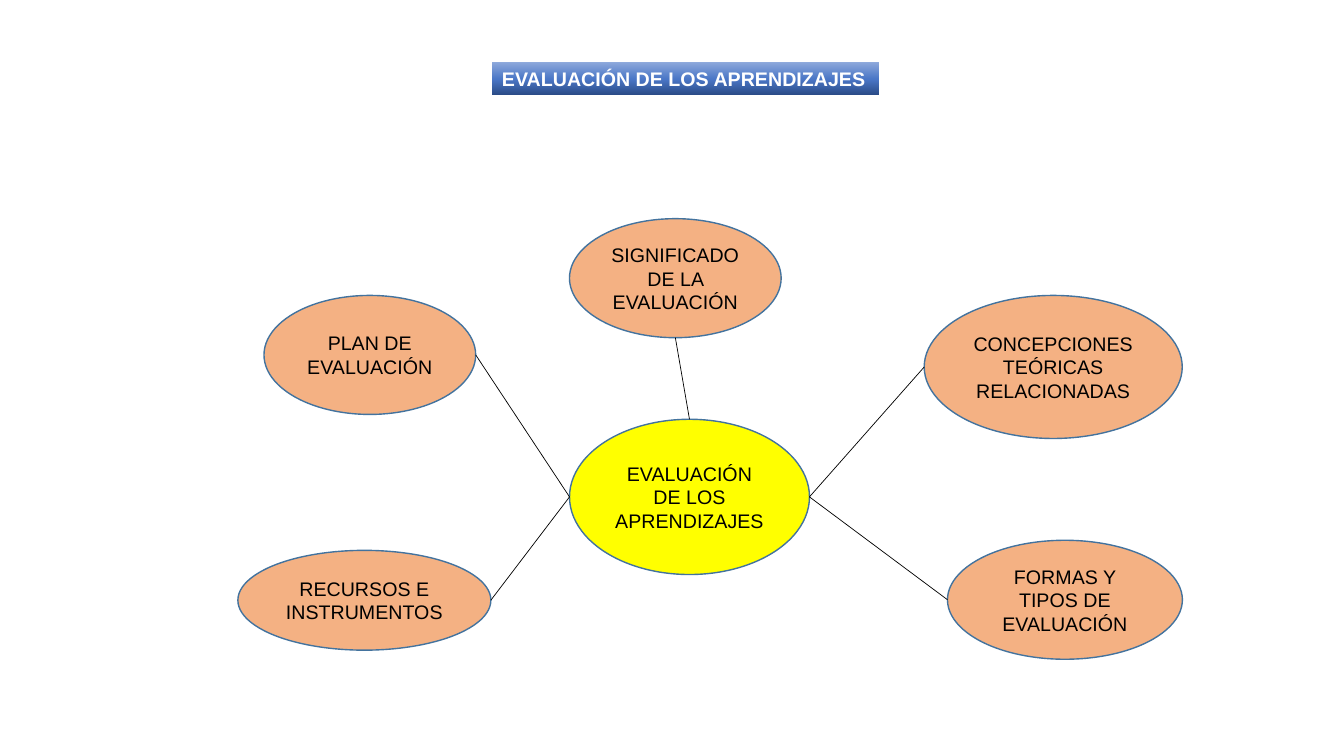
from copy import deepcopy

from lxml.etree import SubElement
from pptx import Presentation
from pptx.dml.color import RGBColor
from pptx.enum.shapes import MSO_CONNECTOR, MSO_SHAPE
from pptx.enum.text import MSO_ANCHOR, MSO_AUTO_SIZE, PP_ALIGN
from pptx.oxml.ns import qn
from pptx.util import Pt

# Content: boxes are left, top, width, height in points
HEADING = ("EVALUACIÓN DE LOS APRENDIZAJES", (351.5, 44, 276.5, 24.2))
HUB = ("EVALUACIÓN DE LOS APRENDIZAJES", (406.8, 299.5, 171.4, 110.9))
# Each topic: text, box, side of the topic and side of the hub that are linked
TOPICS = [
    ("SIGNIFICADO DE LA EVALUACIÓN", (406.8, 156.2, 151.2, 85), "bottom", "top"),
    ("FORMAS Y TIPOS DE EVALUACIÓN", (676.8, 385.9, 167.8, 85), "left", "right"),
    ("RECURSOS E INSTRUMENTOS", (169.9, 393.1, 180.7, 71.3), "right", "left"),
    ("CONCEPCIONES TEÓRICAS RELACIONADAS", (660.2, 211, 184.3, 102.2), "left", "right"),
    ("PLAN DE EVALUACIÓN", (188.6, 211, 151.2, 85), "right", "left"),
]

THEME = {
    "font": "Arial",
    "size": 14,
    "text": "000000",
    "heading_text": "FFFFFF",
    "heading_fill": [(0, "2A4B86"), (0.48, "4A76C6"), (1, "8FAADC")],
    "hub": "FFFF00",
    "topic": "F4B183",
    "outline": "43739E",
    "outline_width": 1,
    "link": "000000",
    "link_width": 0.5,
}
SIDES = {"top": (0.5, 0), "left": (0, 0.5), "bottom": (0.5, 1), "right": (1, 0.5)}


def rgb(key):
    return RGBColor.from_string(THEME[key])


def apply(target, formats):
    for attribute, value in formats.items():
        setattr(target, attribute, value)


def add_label(slide, preset, text, box, color, bold, align, frame_format):
    label = slide.shapes.add_shape(preset, *map(Pt, box))
    label.shadow.inherit = False
    apply(label.text_frame, frame_format)
    paragraph = label.text_frame.paragraphs[0]
    paragraph.alignment = align
    run = paragraph.add_run()
    run.text = text
    apply(run.font, {"name": THEME["font"], "size": Pt(THEME["size"]), "bold": bold})
    run.font.color.rgb = rgb(color)
    return label


def add_heading(slide):
    text, box = HEADING
    heading = add_label(
        slide, MSO_SHAPE.RECTANGLE, text, box, "heading_text", True, PP_ALIGN.LEFT,
        {"word_wrap": False, "auto_size": MSO_AUTO_SIZE.SHAPE_TO_FIT_TEXT,
         "vertical_anchor": MSO_ANCHOR.TOP})
    heading.line.fill.background()
    heading.fill.gradient()
    heading.fill.gradient_angle = 90
    stop_list = heading.element.spPr.find(".//" + qn("a:gsLst"))
    stop_list.append(deepcopy(stop_list[0]))
    for stop, (position, color) in zip(heading.fill.gradient_stops, THEME["heading_fill"]):
        stop.position = position
        stop.color.rgb = RGBColor.from_string(color)


def add_bubble(slide, text, box, fill):
    bubble = add_label(
        slide, MSO_SHAPE.OVAL, text, box, "text", False, PP_ALIGN.CENTER,
        {"word_wrap": True, "vertical_anchor": MSO_ANCHOR.MIDDLE})
    bubble.fill.solid()
    bubble.fill.fore_color.rgb = rgb(fill)
    bubble.line.color.rgb = rgb("outline")
    bubble.line.width = Pt(THEME["outline_width"])


def side_point(box, side):
    left, top, width, height = box
    across, down = SIDES[side]
    return Pt(left + across * width), Pt(top + down * height)


def add_link(slide, start, end):
    link = slide.shapes.add_connector(MSO_CONNECTOR.STRAIGHT, *start, *end)
    link.line.color.rgb = rgb("link")
    link.line.width = Pt(THEME["link_width"])
    SubElement(link.element.spPr, qn("a:effectLst"))


def main():
    deck = Presentation()
    apply(deck, {"slide_width": Pt(960), "slide_height": Pt(540)})
    slide = deck.slides.add_slide(deck.slide_layouts[6])
    add_heading(slide)
    add_bubble(slide, *HUB, "hub")
    for text, box, topic_side, hub_side in TOPICS:
        add_bubble(slide, text, box, "topic")
        add_link(slide, side_point(HUB[1], hub_side), side_point(box, topic_side))
    deck.save("out.pptx")


if __name__ == "__main__":
    main()
